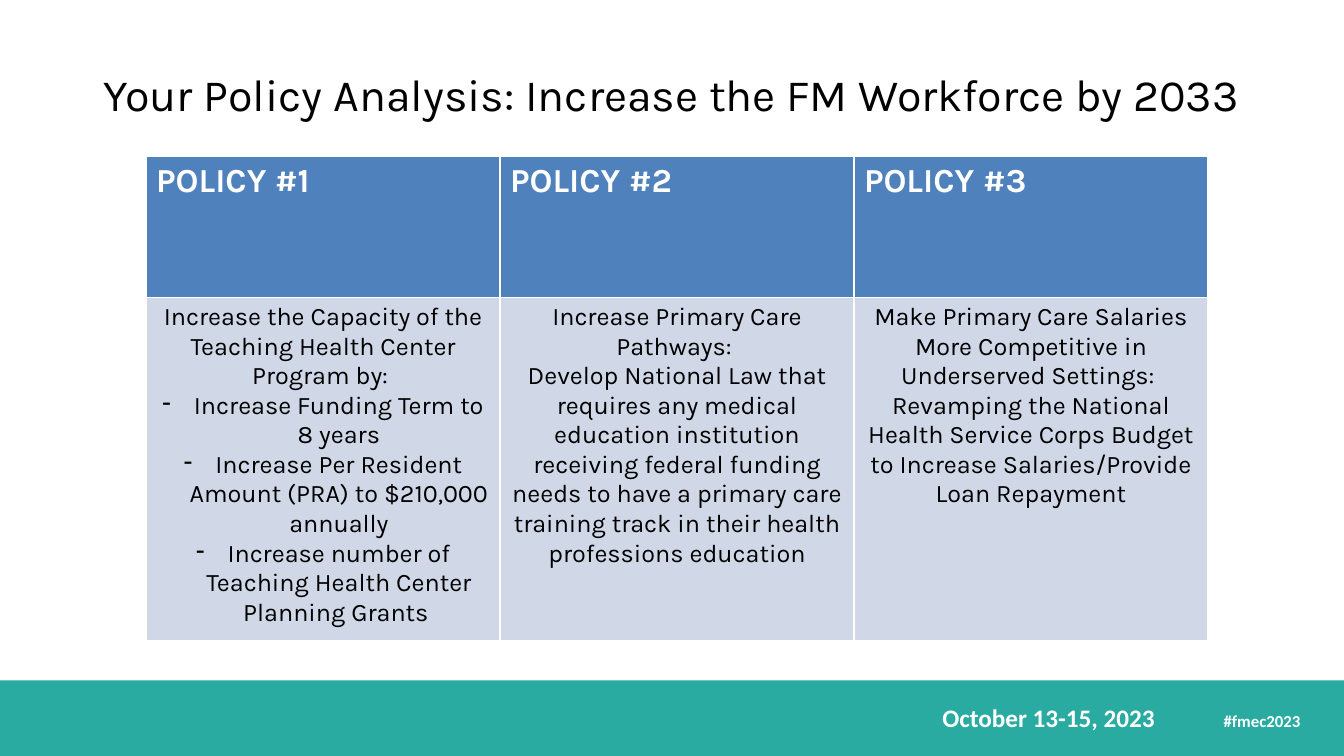
from lxml.etree import SubElement
from pptx import Presentation
from pptx.dml.color import RGBColor
from pptx.enum.shapes import MSO_SHAPE
from pptx.enum.text import MSO_ANCHOR, PP_ALIGN
from pptx.oxml.ns import qn
from pptx.util import Pt

WIDE, HIGH = 960, 540
POLICIES = [
    ("POLICY #1", "Increase the Capacity of the Teaching Health Center Program by: ", [
        "- Increase Funding Term to 8 years",
        "- Increase Per Resident Amount (PRA) to $210,000 annually",
        "- Increase number of Teaching Health Center Planning Grants "]),
    ("POLICY #2", "Increase Primary Care Pathways: ", [
        "Develop National Law that requires any medical education institution "
        "receiving federal funding needs to have a primary care training track "
        "in their health professions education"]),
    ("POLICY #3", "Make Primary Care Salaries More Competitive in Underserved Settings: ", [
        "Revamping the National Health Service Corps Budget to Increase "
        "Salaries/Provide Loan Repayment"]),
]


def paint(color, tone):
    """Set a fill's or font's colour from a hex string."""
    color.rgb = RGBColor.from_string(tone)


def fill(part, tone):
    """Give a shape or cell a solid fill."""
    part.fill.solid()
    paint(part.fill.fore_color, tone)


def dash(para, hang):
    """Turn a paragraph into a dash bullet with a hanging indent."""
    props = para._p.get_or_add_pPr()
    props.set("marL", str(Pt(hang)))
    props.set("indent", str(-Pt(hang)))
    SubElement(props, qn("a:buChar")).set("char", "-")


def write(frame, *lines, size=18, font="Karla", tone="000000", bold=False,
          align=PP_ALIGN.CENTER):
    """Write lines as paragraphs; a leading dash makes a bullet."""
    frame.word_wrap = True
    for i, line in enumerate(lines):
        para = frame.add_paragraph() if i else frame.paragraphs[0]
        para.alignment = align
        if line.startswith("- "):
            dash(para, 22.5)
        run = para.add_run()
        run.text = line.removeprefix("- ")
        run.font.size, run.font.name, run.font.bold = Pt(size), font, bold
        paint(run.font.color, tone)


def add_foot(slide, left, top, width, height):
    """Draw the footer band with the date and the hashtag."""
    band = slide.shapes.add_shape(
        MSO_SHAPE.RECTANGLE, Pt(left), Pt(top), Pt(width), Pt(height))
    band.shadow.inherit = False
    fill(band, "2AABA2")
    band.line.fill.background()
    for text, size, end, drop in (("October 13-15, 2023", 18, 128, 12),
                                  ("#fmec2023", 12, 24, 10.5)):
        box = slide.shapes.add_textbox(
            Pt(left + width - end - 200), Pt(top + drop), Pt(200), Pt(29))
        box.text_frame.vertical_anchor = MSO_ANCHOR.BOTTOM
        write(box.text_frame, text, size=size, font="Calibri", tone="FFFFFF",
              bold=True, align=PP_ALIGN.RIGHT)


def add_title(slide, left, top, width, height):
    """Place and fill the title."""
    title = slide.shapes.title
    title.left, title.top = Pt(left), Pt(top)
    title.width, title.height = Pt(width), Pt(height)
    title.text_frame.vertical_anchor = MSO_ANCHOR.MIDDLE
    write(title.text_frame,
          "Your Policy Analysis: Increase the FM Workforce by 2033", size=32)


def add_grid(slide, left, top, width, height):
    """Draw the table with one column for each policy."""
    grid = slide.shapes.add_table(
        2, len(POLICIES), Pt(left), Pt(top), Pt(width), Pt(height)).table
    grid.rows[0].height, grid.rows[1].height = Pt(100.8), Pt(height - 100.8)
    for i, (name, lead, points) in enumerate(POLICIES):
        head, body = grid.cell(0, i), grid.cell(1, i)
        fill(head, "4F81BD")
        write(head.text_frame, name, size=24, tone="FFFFFF", bold=True,
              align=PP_ALIGN.LEFT)
        fill(body, "D0D8E8")
        write(body.text_frame, lead, *points)


def main():
    """Build and save the slide."""
    deck = Presentation()
    deck.slide_width, deck.slide_height = Pt(WIDE), Pt(HIGH)
    slide = deck.slides.add_slide(deck.slide_layouts[5])
    add_foot(slide, 0, HIGH - 54, WIDE, 54)
    add_title(slide, 48, 21.6, WIDE - 96, 90)
    add_grid(slide, 104.4, 111.6, 758.4, 327.6)
    deck.save("out.pptx")


if __name__ == "__main__":
    main()
